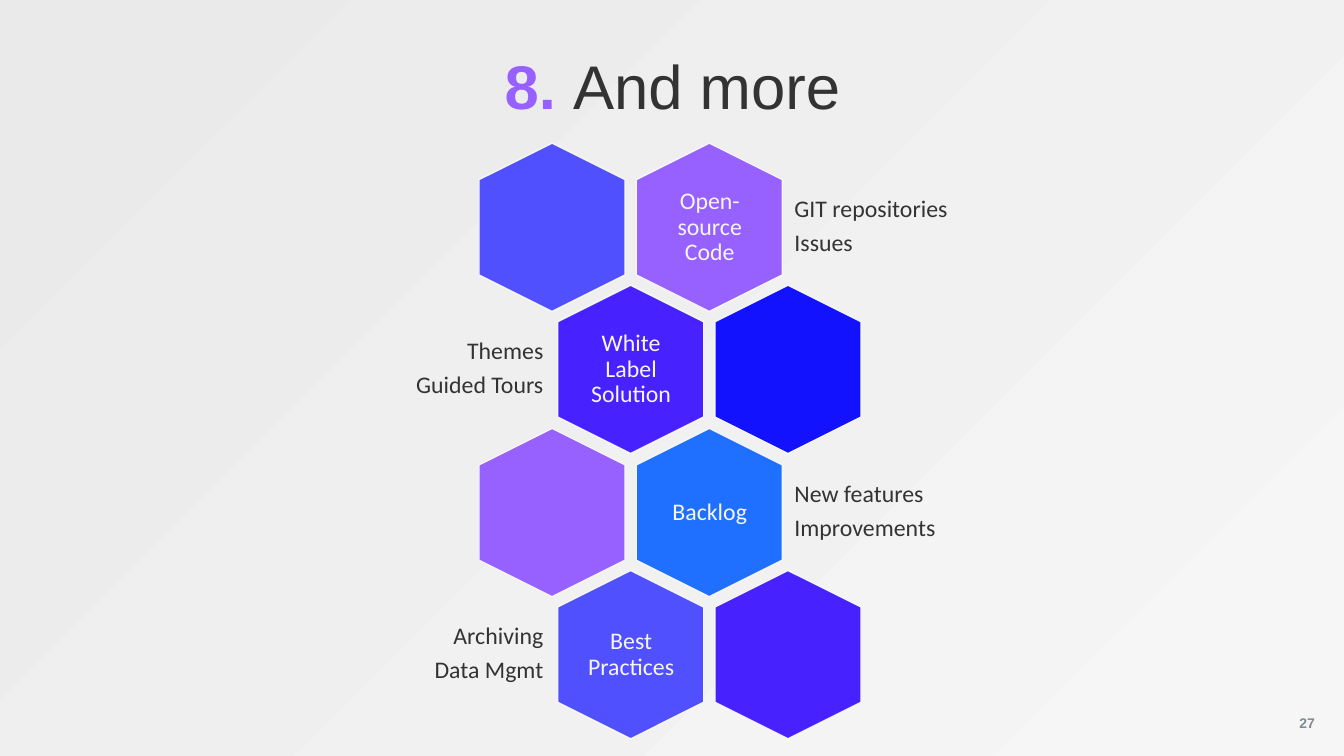
from pptx import Presentation
from pptx.dml.color import RGBColor
from pptx.enum.shapes import MSO_SHAPE
from pptx.enum.text import MSO_ANCHOR, MSO_AUTO_SIZE, PP_ALIGN
from pptx.util import Pt

HEXAGON = MSO_SHAPE.HEXAGON
MIDDLE = MSO_ANCHOR.MIDDLE
NO_AUTOFIT = MSO_AUTO_SIZE.NONE
LEFT, CENTER, RIGHT = PP_ALIGN.LEFT, PP_ALIGN.CENTER, PP_ALIGN.RIGHT
PX = 9144
PALE, DARK, PURPLE = "F6F6F6", "333333", "9761FF"


def color(value):
    return RGBColor.from_string(value)


def write_text(shape, lines, alignment, inset, font_format, paragraph_format):
    frame = shape.text_frame
    frame_format = {"word_wrap": True, "auto_size": NO_AUTOFIT, "vertical_anchor": MIDDLE}
    for side in ("left", "top", "right", "bottom"):
        frame_format["margin_" + side] = inset * PX
    for name, value in frame_format.items():
        setattr(frame, name, value)
    frame.text = "\n".join(lines)
    for paragraph in frame.paragraphs:
        paragraph.alignment = alignment
        for name, value in paragraph_format.items():
            setattr(paragraph, name, value)
        for run in paragraph.runs:
            for name, value in font_format.items():
                if name == "color":
                    run.font.color.rgb = color(value)
                else:
                    setattr(run.font, name, value)


presentation = Presentation()
presentation.slide_width = 1333 * PX
presentation.slide_height = 750 * PX
slide = presentation.slides.add_slide(presentation.slide_layouts[5])

background = slide.background.fill
background.gradient()
background.gradient_angle = 315
for stop, value, position in zip(background.gradient_stops, ("EAEAEA", PALE), (0, 1)):
    stop.color.rgb = color(value)
    stop.position = position

title = slide.shapes.title
title_place = {"left": 92, "top": 40, "width": 1150, "height": 97}
for name, value in title_place.items():
    setattr(title, name, value * PX)
title_font = {"name": "Arial", "size": Pt(44), "bold": True, "color": PURPLE}
write_text(title, ["8. "], CENTER, 5, title_font, {"line_spacing": 0.9})
title_words = title.text_frame.paragraphs[0].add_run()
title_words.text = "And more"
words_format = {"name": "Arial", "size": Pt(44), "bold": False}
for name, value in words_format.items():
    setattr(title_words.font, name, value)
title_words.font.color.rgb = color(DARK)

page_number = slide.shapes.add_textbox(1275 * PX, 701 * PX, 43 * PX, 32 * PX)
number_font = {"name": "Arial", "size": Pt(10), "bold": True, "color": "808B93"}
write_text(page_number, ["27"], CENTER, 5, number_font, {})

rows = [
    (("5050FF", PURPLE), "Open-source Code", ["GIT repositories", "Issues"]),
    (("4722FF", "1212FF"), "White Label Solution", ["Themes", "Guided Tours"]),
    ((PURPLE, "1F70FF"), "Backlog", ["New features", "Improvements"]),
    (("5050FF", "4722FF"), "Best Practices", ["Archiving", "Data Mgmt"]),
]
spacing = {"line_spacing": 0.9, "space_after": Pt(6)}
label_font = {"name": "Calibri", "size": Pt(17), "color": PALE}
detail_font = {**label_font, "color": DARK}

for row, (fills, label, details) in enumerate(rows):
    top = 153 + row * 283 // 2
    shifted = row % 2
    row_left = 464 + 78 * shifted
    for column, fill in enumerate(fills):
        hexagon = slide.shapes.add_shape(
            HEXAGON, (row_left + 156 * column) * PX, top * PX, 167 * PX, 145 * PX)
        hexagon.rotation = 90
        hexagon.adjustments[0] = 0.25
        hexagon.adjustments[1] = 1.1547
        hexagon.shadow.inherit = False
        hexagon.fill.solid()
        hexagon.fill.fore_color.rgb = color(fill)
        hexagon.line.color.rgb = color(PALE)
        hexagon.line.width = Pt(1)

    label_left = row_left + 156 * (1 - shifted) + 34
    label_box = slide.shapes.add_textbox(label_left * PX, (top + 15) * PX, 100 * PX, 115 * PX)
    write_text(label_box, [label], CENTER, 7, label_font, spacing)

    detail_left, detail_width, alignment = (366, 180, RIGHT) if shifted else (781, 186, LEFT)
    detail_box = slide.shapes.add_textbox(
        detail_left * PX, (top + 22) * PX, detail_width * PX, 100 * PX)
    write_text(detail_box, details, alignment, 7, detail_font, spacing)

presentation.save("out.pptx")
